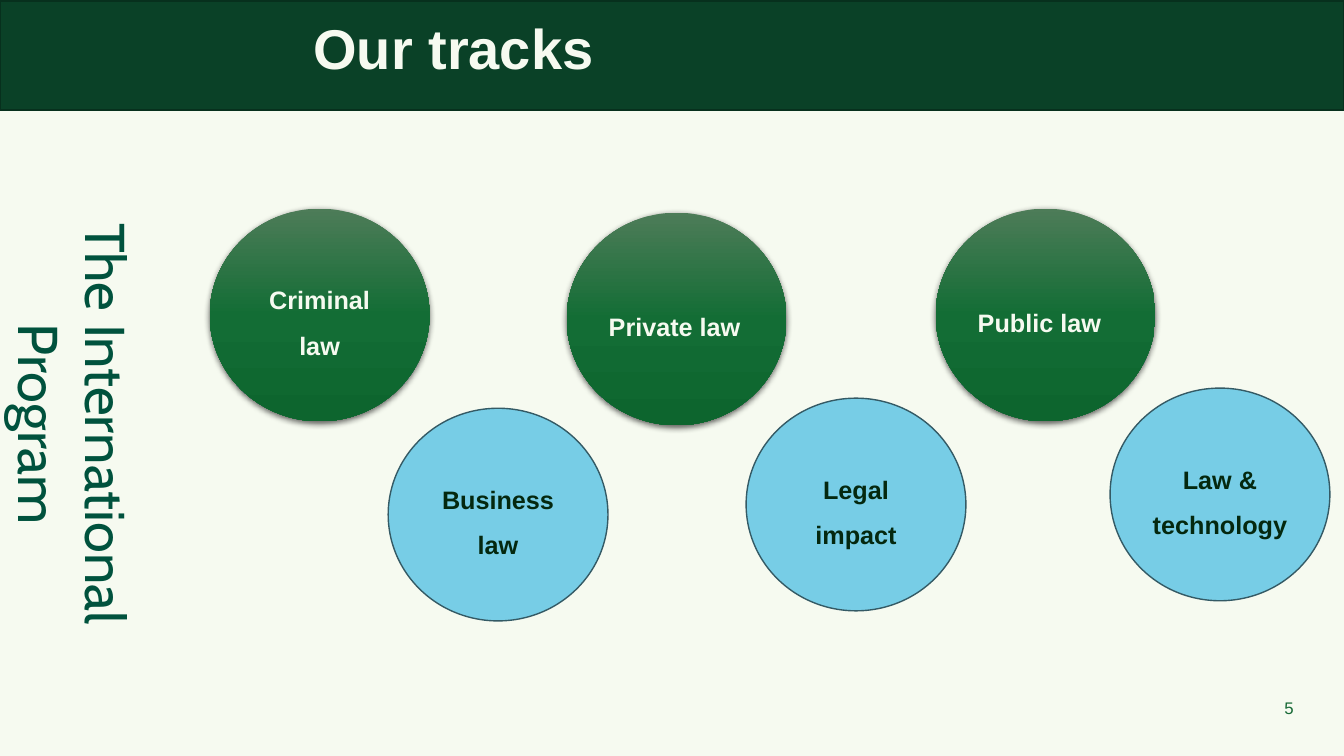
from lxml.etree import SubElement
from pptx import Presentation
from pptx.dml.color import RGBColor
from pptx.enum.shapes import MSO_SHAPE
from pptx.enum.text import MSO_ANCHOR, PP_ALIGN
from pptx.oxml.ns import qn
from pptx.util import Inches, Pt

CREAM, DARK_GREEN, INK, SKY = "F6FAF0", "0A4127", "04280F", "77CDE6"
GREEN_STOPS = [(0, "4D7C58"), (50, "136D35"), (100, "0D652E")]
CIRCLE_SIZE = (2.18, 2.11)


def color(value):
    return RGBColor.from_string(value)


def add_color(parent, value):
    return SubElement(parent, qn("a:srgbClr"), val=value)


def write(tf, text, *, size, fill, font="Arial", bold=False, align=PP_ALIGN.LEFT,
          spacing=1.0, anchor=MSO_ANCHOR.MIDDLE, indents=()):
    """Fill a frame, one paragraph per line; indents give left margins in inches."""
    tf.word_wrap = True
    tf.vertical_anchor = anchor
    for i, line in enumerate(text.split("\n")):
        p = tf.paragraphs[0] if i == 0 else tf.add_paragraph()
        p.alignment = align
        p.line_spacing = spacing
        if i < len(indents):
            p._p.get_or_add_pPr().set("marL", str(Inches(indents[i])))
        r = p.add_run()
        r.text = line
        r.font.name, r.font.size, r.font.bold = font, Pt(size), bold
        r.font.color.rgb = color(fill)


class Deck:
    def __init__(self):
        self.prs = Presentation()
        self.prs.slide_width, self.prs.slide_height = Inches(13.33), Inches(7.5)
        self.s = self.prs.slides.add_slide(self.prs.slide_layouts[6])
        background = self.s.background.fill
        background.solid()
        background.fore_color.rgb = color(CREAM)

    def text(self, x, y, w, h, text, rotation=0, **style):
        sp = self.s.shapes.add_textbox(Inches(x), Inches(y), Inches(w), Inches(h))
        sp.rotation = rotation
        write(sp.text_frame, text, **style)

    def shape(self, kind, x, y, w, h, fill=None, line=None):
        sp = self.s.shapes.add_shape(kind, Inches(x), Inches(y), Inches(w), Inches(h))
        sp.shadow.inherit = False
        if fill:
            sp.fill.solid()
            sp.fill.fore_color.rgb = color(fill)
        if line:
            sp.line.color.rgb = color(line)
            sp.line.width = Pt(1)
        else:
            sp.line.fill.background()
        return sp

    def track(self, x, y, text, align=PP_ALIGN.CENTER, main=False):
        """Draw a circle: shaded green for a main track, flat blue otherwise."""
        if main:
            sp = self.shape(MSO_SHAPE.OVAL, x, y, *CIRCLE_SIZE)
            self.shade(sp)
        else:
            sp = self.shape(MSO_SHAPE.OVAL, x, y, *CIRCLE_SIZE, SKY, "345A65")
        write(sp.text_frame, text, size=18, fill=CREAM if main else INK,
              bold=True, align=align, spacing=1.5)

    def shade(self, sp):
        """Give a shape the green gradient and a soft shadow below."""
        sp.fill.gradient()
        sp.fill.gradient_angle = 270
        stops = sp._element.spPr.find(".//" + qn("a:gsLst"))
        for stop in list(stops):
            stops.remove(stop)
        for position, value in GREEN_STOPS:
            add_color(SubElement(stops, qn("a:gs"), pos=str(position * 1000)), value)
        effects = sp._element.spPr.find(qn("a:effectLst"))
        shadow = SubElement(effects, qn("a:outerShdw"), blurRad=str(Pt(4.5)),
                            dist=str(Pt(1.5)), dir="5400000", rotWithShape="0")
        SubElement(add_color(shadow, "000000"), qn("a:alpha"), val="63000")


def main():
    deck = Deck()
    deck.shape(MSO_SHAPE.RECTANGLE, 0, 0.01, 13.33, 1.08, DARK_GREEN, "07301D")
    deck.text(3.01, 0.01, 9.35, 1.08, "Our tracks", size=40, fill=CREAM,
              bold=True, spacing=0.7)
    deck.text(12.41, 6.82, 0.52, 0.4, "5", size=12, fill="176936",
              align=PP_ALIGN.RIGHT)
    deck.text(-1.48, 3.6, 4.42, 1.45, "The International\nProgram", rotation=90,
              size=40, fill="00523D", font="Cabin", anchor=MSO_ANCHOR.TOP,
              indents=(0, 1))

    for x, y, name in [(11.01, 3.85, "Law & technology"),
                       (3.85, 4.05, "Business law"),
                       (7.4, 3.95, "Legal impact")]:
        deck.track(x, y, name)
    for x, y, name, align in [(2.08, 2.07, "Criminal law", PP_ALIGN.CENTER),
                              (9.28, 2.07, "Public law", PP_ALIGN.JUSTIFY),
                              (5.62, 2.11, "Private law", PP_ALIGN.JUSTIFY)]:
        deck.track(x, y, name, align, main=True)
    deck.prs.save("out.pptx")


if __name__ == "__main__":
    main()
